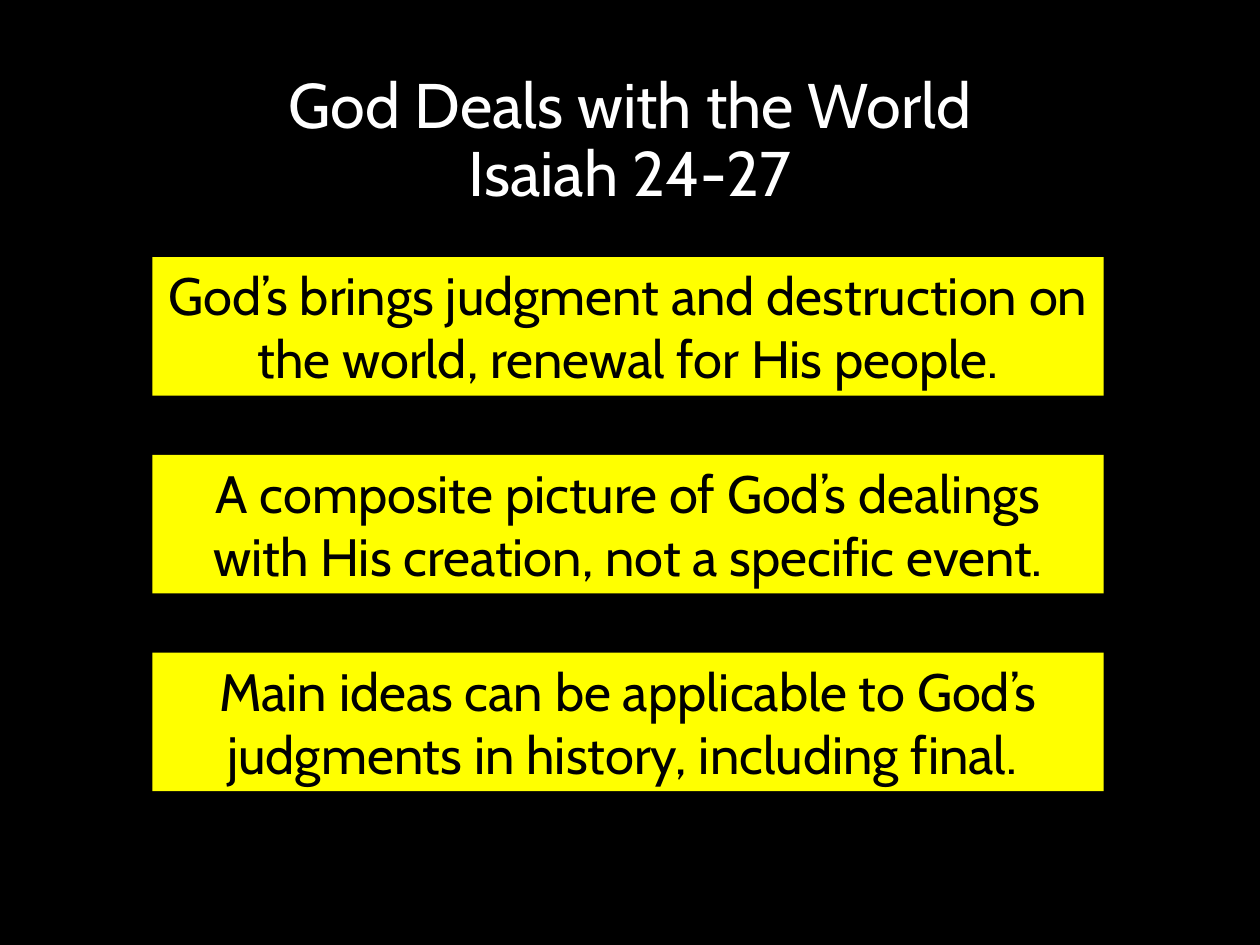
import pptx
import pptx.util
import pptx.dml.color
import pptx.enum.shapes
import pptx.enum.text

Pt = pptx.util.Pt
RGB = pptx.dml.color.RGBColor.from_string

TITLE = "God Deals with the World\vIsaiah 24-27"
POINTS = [
    "God’s brings judgment and destruction on the world, renewal for His people.",
    "A composite picture of God’s dealings with His creation, not a specific event.",
    "Main ideas can be applicable to God’s judgments in history, including final. ",
]
THEME = {
    "font": "Cabin",
    "background": RGB("000000"),
    "title": RGB("FFFFFF"),
    "box": RGB("FFFF00"),
    "text": RGB("000000"),
    "title_size": Pt(36),
    "text_size": Pt(30),
}
BOX_LEFT, BOX_TOP, BOX_WIDTH, BOX_HEIGHT = 87.12, 146.88, 543.6, 79.2
BOX_STEP = 113.04


def write(sp, text, size, color):
    tf = sp.text_frame
    tf.word_wrap = True
    tf.auto_size = pptx.enum.text.MSO_AUTO_SIZE.NONE
    tf.vertical_anchor = pptx.enum.text.MSO_ANCHOR.MIDDLE
    p = tf.paragraphs[0]
    p.text = text
    p.alignment = pptx.enum.text.PP_ALIGN.CENTER
    p.font.name = THEME["font"]
    p.font.size = size
    p.font.color.rgb = color
    return p


def add_title(s):
    sp = s.shapes.title
    sp.left, sp.top, sp.width, sp.height = Pt(49.68), Pt(28.8), Pt(620.64), Pt(104.4)
    p = write(sp, TITLE, THEME["title_size"], THEME["title"])
    p.line_spacing = 0.9


def add_point(s, index, text):
    sp = s.shapes.add_shape(
        pptx.enum.shapes.MSO_SHAPE.RECTANGLE,
        Pt(BOX_LEFT), Pt(BOX_TOP + index * BOX_STEP), Pt(BOX_WIDTH), Pt(BOX_HEIGHT),
    )
    sp.shadow.inherit = False
    sp.fill.solid()
    sp.fill.fore_color.rgb = THEME["box"]
    sp.line.fill.background()
    write(sp, text, THEME["text_size"], THEME["text"])


def main():
    prs = pptx.Presentation()
    prs.slide_width, prs.slide_height = Pt(720), Pt(540)
    s = prs.slides.add_slide(prs.slide_layouts[5])
    s.background.fill.solid()
    s.background.fill.fore_color.rgb = THEME["background"]
    add_title(s)
    for index, text in enumerate(POINTS):
        add_point(s, index, text)
    prs.save("out.pptx")


if __name__ == "__main__":
    main()
